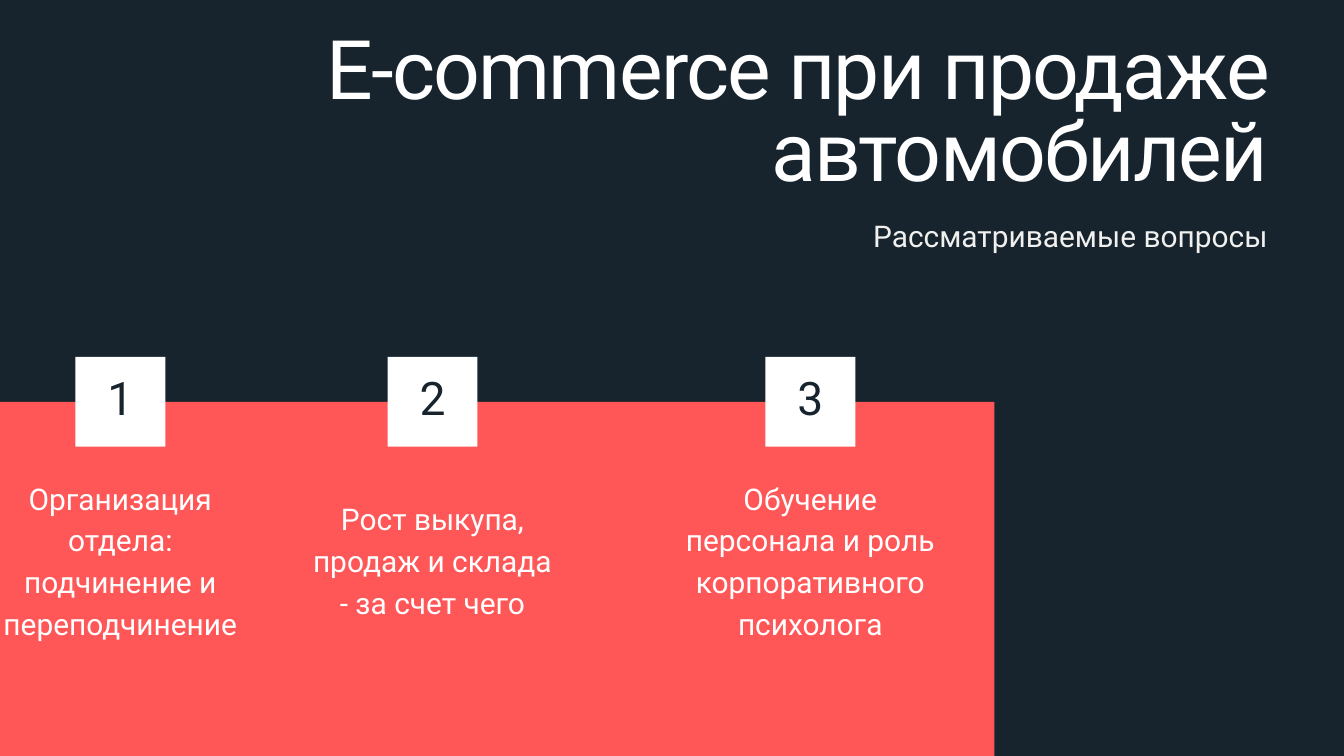
from dataclasses import dataclass

from pptx import Presentation
from pptx.dml.color import RGBColor
from pptx.enum.shapes import MSO_SHAPE
from pptx.enum.text import MSO_AUTO_SIZE, PP_ALIGN
from pptx.util import Cm, Pt

RECTANGLE = MSO_SHAPE.RECTANGLE
RIGHT = PP_ALIGN.RIGHT
CENTER = PP_ALIGN.CENTER
GROW = MSO_AUTO_SIZE.SHAPE_TO_FIT_TEXT

NAVY = RGBColor(0x17, 0x24, 0x2D)
CORAL = RGBColor(0xFF, 0x57, 0x57)
WHITE = RGBColor(0xFF, 0xFF, 0xFF)
OFF_WHITE = RGBColor(0xF0, 0xF0, 0xEE)
FONT = "Roboto"

# Lengths in centimetres
SLIDE_WIDTH, SLIDE_HEIGHT = 50.8, 28.58
PANEL_TOP, PANEL_WIDTH = 15.19, 37.59
BADGE_SIZE = 3.4
NUMBER_TOP, NUMBER_WIDTH, NUMBER_HEIGHT = 14.33, 2.31, 1.9
TOPIC_MIDDLE, TOPIC_LINE_HEIGHT = 21.01, 1.54
HEADING_LEFT, HEADING_WIDTH = 8.89, 39.04


@dataclass(frozen=True)
class Box:
    left: float
    top: float
    width: float
    height: float

    def lengths(self) -> tuple:
        return Cm(self.left), Cm(self.top), Cm(self.width), Cm(self.height)


@dataclass(frozen=True)
class TextStyle:
    size: float
    line_spacing: float
    color: RGBColor
    alignment: PP_ALIGN
    tracking: float = 0


@dataclass(frozen=True)
class Topic:
    center: float
    width: float
    lines: int
    text: str


TITLE = TextStyle(88, 88, WHITE, RIGHT, -1.8)
SUBTITLE = TextStyle(32, 41.6, OFF_WHITE, RIGHT)
NUMBER = TextStyle(49.5, 49.5, NAVY, CENTER, -1)
BODY = TextStyle(32, 44.8, WHITE, CENTER)

TOPICS = [
    Topic(4.55, 9.04, 4, "Организация отдела:\nподчинение и переподчинение"),
    Topic(16.35, 9.04, 3, "Рост выкупа, продаж и склада\n- за счет чего"),
    Topic(30.63, 9.45, 4, "Обучение персонала и роль корпоративного психолога"),
]


def add_rectangle(slide, box: Box, color: RGBColor) -> None:
    shape = slide.shapes.add_shape(RECTANGLE, *box.lengths())
    shape.shadow.inherit = False
    shape.fill.solid()
    shape.fill.fore_color.rgb = color
    shape.line.fill.background()


def add_text(slide, box: Box, text: str, style: TextStyle) -> None:
    text_frame = slide.shapes.add_textbox(*box.lengths()).text_frame
    text_frame.word_wrap = True
    text_frame.auto_size = GROW
    text_frame.margin_left = text_frame.margin_right = 0
    text_frame.margin_top = text_frame.margin_bottom = 0
    text_frame.text = text
    for paragraph in text_frame.paragraphs:
        paragraph.alignment = style.alignment
        paragraph.line_spacing = Pt(style.line_spacing)
        for run in paragraph.runs:
            run.font.name = FONT
            run.font.size = Pt(style.size)
            run.font.color.rgb = style.color
            if style.tracking:
                run._r.get_or_add_rPr().set("spc", str(round(style.tracking * 100)))


def add_topic(slide, number: int, topic: Topic) -> None:
    # The badge straddles the top edge of the panel
    half_badge = BADGE_SIZE / 2
    add_rectangle(slide, Box(topic.center - half_badge, PANEL_TOP - half_badge,
                             BADGE_SIZE, BADGE_SIZE), WHITE)
    add_text(slide, Box(topic.center - NUMBER_WIDTH / 2, NUMBER_TOP,
                        NUMBER_WIDTH, NUMBER_HEIGHT), str(number), NUMBER)
    height = topic.lines * TOPIC_LINE_HEIGHT
    add_text(slide, Box(topic.center - topic.width / 2, TOPIC_MIDDLE - height / 2,
                        topic.width, height), topic.text, BODY)


def main() -> None:
    presentation = Presentation()
    presentation.slide_width = Cm(SLIDE_WIDTH)
    presentation.slide_height = Cm(SLIDE_HEIGHT)
    slide = presentation.slides.add_slide(presentation.slide_layouts[6])
    slide.background.fill.solid()
    slide.background.fill.fore_color.rgb = NAVY

    # Panel behind the topics
    add_rectangle(slide, Box(0, PANEL_TOP, PANEL_WIDTH, SLIDE_HEIGHT - PANEL_TOP), CORAL)

    # Heading
    add_text(slide, Box(HEADING_LEFT, 1.27, HEADING_WIDTH, 6.48),
             "E-commerce при продаже автомобилей", TITLE)
    add_text(slide, Box(HEADING_LEFT, 8.1, HEADING_WIDTH, 1.42),
             "Рассматриваемые вопросы", SUBTITLE)

    # Numbered topics
    for number, topic in enumerate(TOPICS, start=1):
        add_topic(slide, number, topic)

    presentation.save("out.pptx")


if __name__ == "__main__":
    main()
